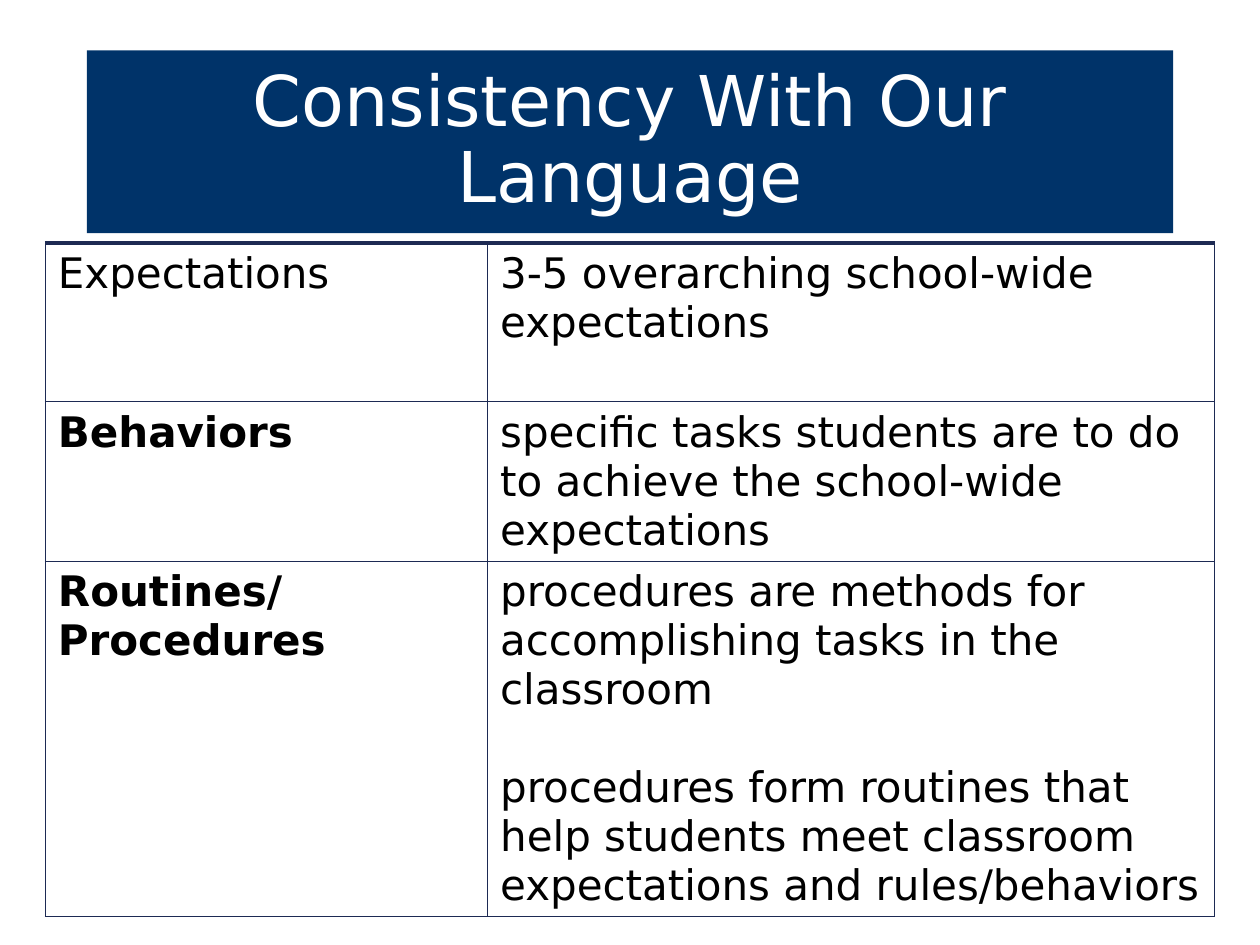
"""Build a slide that defines the shared school vocabulary in a titled table."""
from lxml import etree
from pptx import Presentation
from pptx.enum.shapes import MSO_SHAPE
from pptx.enum.text import MSO_ANCHOR, PP_ALIGN
from pptx.dml.color import RGBColor
from pptx.oxml.ns import qn
from pptx.util import Inches, Pt

RECTANGLE = MSO_SHAPE.RECTANGLE
MIDDLE, TOP = MSO_ANCHOR.MIDDLE, MSO_ANCHOR.TOP
LEFT, CENTER = PP_ALIGN.LEFT, PP_ALIGN.CENTER
COLORS = {"banner": "003369", "border": "1D2A53", "text": "000000", "white": "FFFFFF"}
FONT = "DejaVu Sans"

presentation = Presentation()
presentation.slide_width, presentation.slide_height = Inches(10), Inches(7.5)
column = presentation.slide_width / 100
row = presentation.slide_height / 75
slide = presentation.slides.add_slide(presentation.slide_layouts[6])


def write_text(frame, lines, size=24, color="text", bold=False, align=LEFT, spacing=1.0, gap=0):
    frame.word_wrap = True
    for index, line in enumerate(lines):
        paragraph = frame.add_paragraph() if index else frame.paragraphs[0]
        paragraph.alignment = align
        paragraph.line_spacing = spacing
        paragraph.space_before = Pt(gap if index else 0)
        run = paragraph.add_run()
        run.text = line
        run.font.name, run.font.size, run.font.bold = FONT, Pt(size), bold
        run.font.color.rgb = RGBColor.from_string(COLORS[color])


def set_border(cell, side, width):
    line = etree.SubElement(cell._tc.get_or_add_tcPr(), qn(f"a:ln{side}"), w=str(Pt(width)))
    fill = etree.SubElement(line, qn("a:solidFill"))
    etree.SubElement(fill, qn("a:srgbClr"), val=COLORS["border"])


definitions = [
    (["Expectations"], False, ["3-5 overarching school-wide expectations"]),
    (["Behaviors"], True,
     ["specific tasks students are to do to achieve the school-wide expectations"]),
    (["Routines/", "Procedures"], True,
     ["procedures are methods for accomplishing tasks in the classroom",
      "procedures form routines that help students meet classroom expectations and rules/behaviors"]),
]
column_spans = [35.1, 57.7]
row_spans = [12.6, 12.6, 28.1]

table = slide.shapes.add_table(
    len(row_spans), len(column_spans), int(3.6 * column), int(19.3 * row),
    int(sum(column_spans) * column), int(sum(row_spans) * row)).table
for table_column, span in zip(table.columns, column_spans):
    table_column.width = int(span * column)
for table_row, span in zip(table.rows, row_spans):
    table_row.height = int(span * row)

for row_index, (term, bold, meaning) in enumerate(definitions):
    write_text(table.cell(row_index, 0).text_frame, term, bold=bold)
    write_text(table.cell(row_index, 1).text_frame, meaning, gap=28)
    for cell in table.rows[row_index].cells:
        cell.vertical_anchor = TOP
        for side in "LRTB":
            set_border(cell, side, 2.25 if side == "T" and row_index == 0 else 0.75)
        cell.fill.solid()
        cell.fill.fore_color.rgb = RGBColor.from_string(COLORS["white"])

banner = slide.shapes.add_shape(
    RECTANGLE, int(6.9 * column), int(4 * row), int(86.2 * column), int(14.5 * row))
banner.shadow.inherit = False
banner.fill.solid()
banner.fill.fore_color.rgb = RGBColor.from_string(COLORS["banner"])
banner.line.fill.background()
banner.text_frame.vertical_anchor = MIDDLE
write_text(banner.text_frame, ["Consistency With Our Language"],
           size=40, color="white", align=CENTER, spacing=0.9)

presentation.save("out.pptx")
